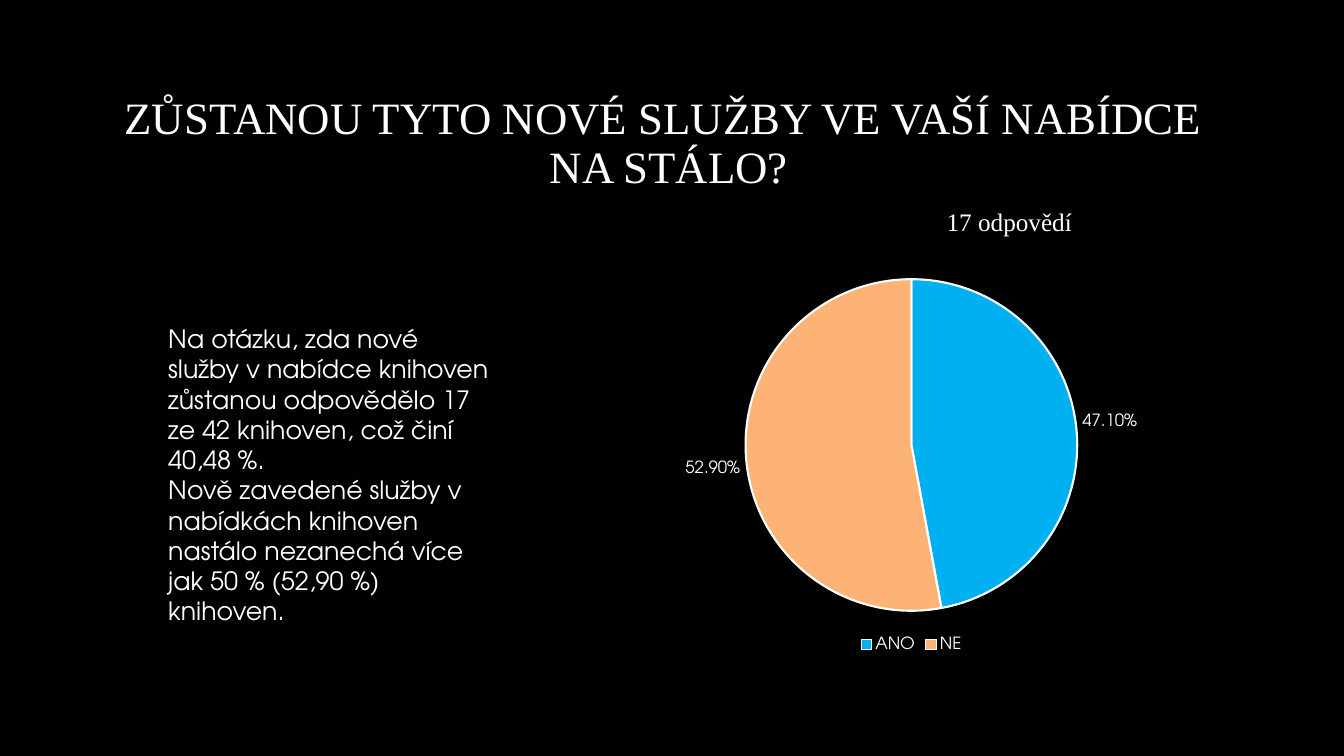
import pptx
import pptx.util
import pptx.dml.color
import pptx.chart.data
import pptx.enum.chart
import pptx.enum.text
import pptx.oxml

Inches, Pt = pptx.util.Inches, pptx.util.Pt
RGBColor = pptx.dml.color.RGBColor
Align = pptx.enum.text.PP_ALIGN
Anchor = pptx.enum.text.MSO_ANCHOR
Enum = pptx.enum.chart

# Content
TITLE = "ZŮSTANOU TYTO NOVÉ SLUŽBY VE VAŠÍ NABÍDCE \vNA STÁLO?"
COUNT = "17 odpovědí"
BODY = [
    "Na otázku, zda nové služby v nabídce knihoven zůstanou odpovědělo 17 "
    "ze 42 knihoven, což činí 40,48 %.",
    "Nově zavedené služby v nabídkách knihoven nastálo nezanechá více "
    "jak 50 % (52,90 %) knihoven.",
]
BLACK = RGBColor(0x00, 0x00, 0x00)
WHITE = RGBColor(0xFF, 0xFF, 0xFF)
BLUE = RGBColor(0x00, 0xB0, 0xF0)
PEACH = RGBColor(0xFE, 0xB3, 0x76)
ANSWERS = [("ANO", 0.471, BLUE), ("NE", 0.529, PEACH)]
SERIF, SANS = "Times New Roman", "TeX Gyre Adventor"

# Places: left, top, width, height in inches
TITLE_AT = (0.1, 0.73, 13.07, 1.41)
CHART_AT = (4.65, 2.64, 8.78, 3.87)
COUNT_AT = (9.29, 2, 1.62, 0.4)
BODY_AT = (1.57, 3.16, 3.38, 3.13)
PIE_TOP, PIE_SIZE = 0.13, 3.29


def style(font, size, face):
    font.size, font.name = Pt(size), face
    font.color.rgb = WHITE


def write(shape, lines, size=18, face=SANS, align=Align.LEFT,
          anchor=Anchor.TOP, space=1.0):
    frame = shape.text_frame
    frame.word_wrap = True
    frame.vertical_anchor = anchor
    for i, line in enumerate(lines):
        para = frame.paragraphs[0] if i == 0 else frame.add_paragraph()
        para.text = line
        para.alignment, para.line_spacing = align, space
        for run in para.runs:
            style(run.font, size, face)


# Slide
deck = pptx.Presentation()
deck.slide_width, deck.slide_height = Inches(13.33), Inches(7.5)
slide = deck.slides.add_slide(deck.slide_layouts[5])
slide.background.fill.solid()
slide.background.fill.fore_color.rgb = BLACK

# Title
title = slide.shapes.title
title.left, title.top, title.width, title.height = map(Inches, TITLE_AT)
write(title, [TITLE], size=32, face=SERIF, align=Align.CENTER,
      anchor=Anchor.MIDDLE, space=0.9)

# Pie chart
data = pptx.chart.data.CategoryChartData(number_format="0.00%")
data.categories = [name for name, _, _ in ANSWERS]
data.add_series("Series 1", [share for _, share, _ in ANSWERS])
chart = slide.shapes.add_chart(
    Enum.XL_CHART_TYPE.PIE, *map(Inches, CHART_AT), data).chart
style(chart.font, 10, SANS)
chart.has_title = False
chart.has_legend = True
chart.legend.position = Enum.XL_LEGEND_POSITION.BOTTOM
chart.legend.include_in_layout = False
style(chart.legend.font, 12, SANS)

plot = chart.plots[0]
for i, (_, _, color) in enumerate(ANSWERS):
    form = plot.series[0].points[i].format
    form.fill.solid()
    form.fill.fore_color.rgb = color
    form.line.color.rgb = WHITE
    form.line.width = Pt(1.5)

plot.has_data_labels = True
labels = plot.data_labels
labels.show_value, labels.show_percentage = True, False
labels.number_format, labels.number_format_is_linked = "0.00%", False
labels.position = Enum.XL_LABEL_POSITION.OUTSIDE_END
style(labels.font, 12, SANS)

# Round pie, centred across the chart frame
wide, high = CHART_AT[2:]
place = {"x": (1 - PIE_SIZE / wide) / 2, "y": PIE_TOP / high,
         "w": PIE_SIZE / wide, "h": PIE_SIZE / high}
parts = "".join(f'<c:{key} val="{val:.4f}"/>' for key, val in place.items())
area = chart.element.find(".//{*}plotArea")
for old in area.findall("{*}layout"):
    area.remove(old)
area.insert(0, pptx.oxml.parse_xml(
    '<c:layout xmlns:c="http://schemas.openxmlformats.org/drawingml/2006/chart">'
    '<c:manualLayout><c:layoutTarget val="inner"/>'
    '<c:xMode val="edge"/><c:yMode val="edge"/>'
    f'{parts}</c:manualLayout></c:layout>'))

# Text boxes
for at, lines, face in [(COUNT_AT, [COUNT], SERIF), (BODY_AT, BODY, SANS)]:
    write(slide.shapes.add_textbox(*map(Inches, at)), lines, face=face)

deck.save("out.pptx")
